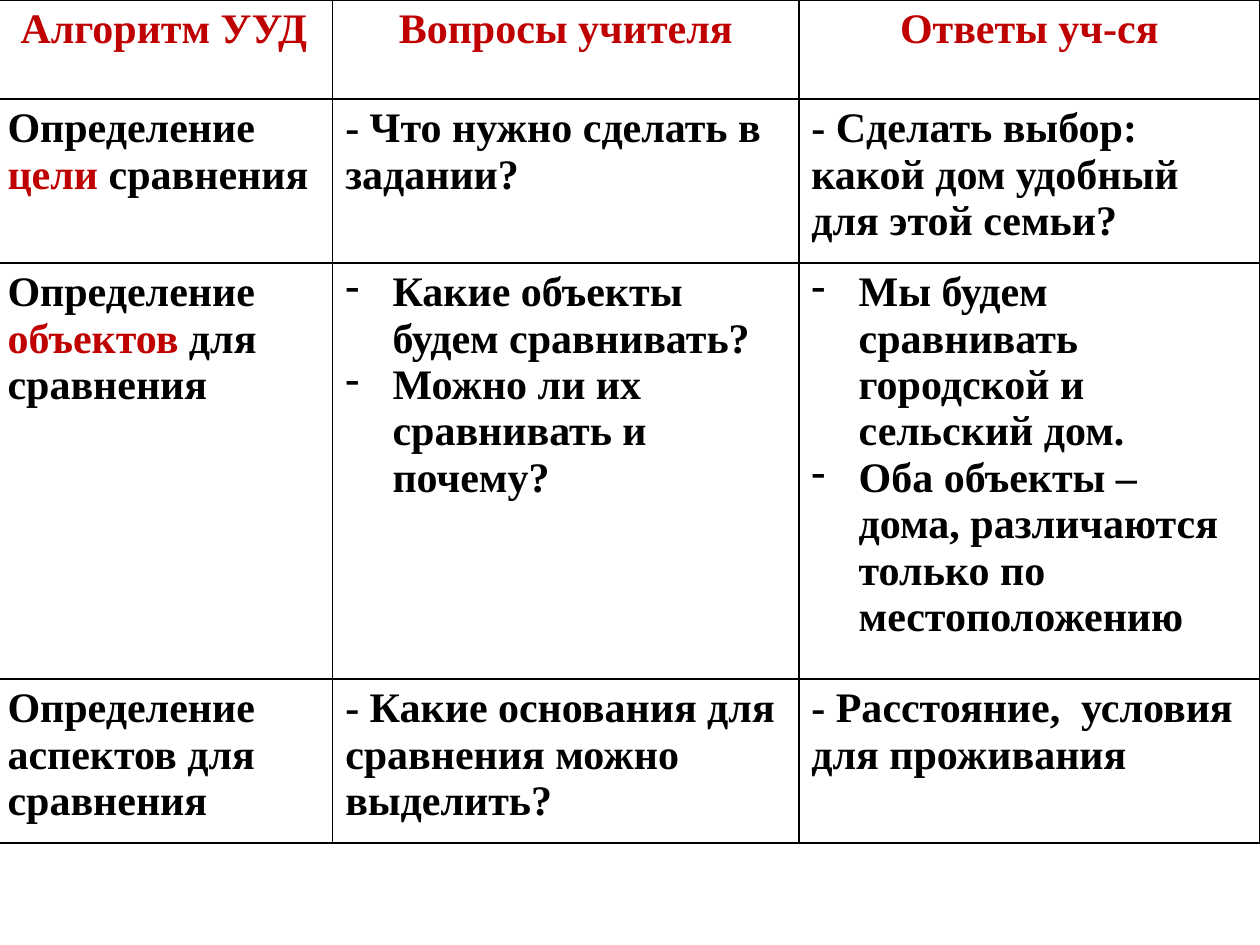
"""Builds a slide with a table of comparison steps, questions and answers."""
import dataclasses

import lxml.etree
import pptx
import pptx.dml.color
import pptx.enum.text
import pptx.oxml.ns
import pptx.util

Pt = pptx.util.Pt
RGB = pptx.dml.color.RGBColor
qn = pptx.oxml.ns.qn


@dataclasses.dataclass(frozen=True)
class Theme:
    """Colours, font and sizes of the slide."""
    ink: str = "000000"
    accent: str = "C00000"
    font: str = "Times New Roman"
    size: float = 24
    border: float = 1
    indent: float = 27


THEME = Theme()
COL_WIDTHS = (193, 266.4, 263.4)
ROW_HEIGHTS = (56.6, 93.7, 237.7, 93.7)
HEADER = ("Алгоритм УУД", "Вопросы учителя", "Ответы уч-ся")
STEPS = (
    (("Определение ", "цели ", "сравнения"),
     ("- Что нужно сделать в задании?",),
     ("- Сделать выбор: какой дом удобный для этой семьи?",)),
    (("Определение ", "объектов", " для сравнения"),
     ("Какие объекты будем сравнивать?",
      "Можно ли их сравнивать и почему?"),
     ("Мы будем сравнивать городской и сельский дом.",
      "Оба объекты – дома, различаются только по местоположению")),
    (("Определение аспектов для сравнения",),
     ("- Какие основания для сравнения можно выделить?",),
     ("- Расстояние,  условия для проживания",)),
)


def add_run(p, text, color=THEME.ink, size=THEME.size, bold=True):
    """Add a formatted run to a paragraph."""
    r = p.add_run()
    r.text = text
    r.font.name = THEME.font
    r.font.size = Pt(size)
    r.font.bold = bold
    r.font.color.rgb = RGB.from_string(color)


def set_dash(p):
    """Give a paragraph a hanging dash bullet."""
    pPr = p._p.get_or_add_pPr()
    pPr.set("marL", str(Pt(THEME.indent)))
    pPr.set("indent", str(-Pt(THEME.indent)))
    lxml.etree.SubElement(pPr, qn("a:buFontTx"))
    lxml.etree.SubElement(pPr, qn("a:buChar"), char="-")


def style_cell(cell):
    """Draw all four borders of a cell and remove its fill."""
    tcPr = cell._tc.get_or_add_tcPr()
    for side in ("a:lnL", "a:lnR", "a:lnT", "a:lnB"):
        ln = lxml.etree.SubElement(tcPr, qn(side), w=str(Pt(THEME.border)))
        fill = lxml.etree.SubElement(ln, qn("a:solidFill"))
        lxml.etree.SubElement(fill, qn("a:srgbClr"), val=THEME.ink)
    cell.fill.background()


def fill_header(cell, text):
    """Write a centred column heading."""
    p = cell.text_frame.paragraphs[0]
    p.alignment = pptx.enum.text.PP_ALIGN.CENTER
    add_run(p, text, color=THEME.accent)


def fill_step(cell, parts):
    """Write a step name, with its second part as the key word."""
    p = cell.text_frame.paragraphs[0]
    for i, text in enumerate(parts):
        add_run(p, text, color=THEME.accent if i == 1 else THEME.ink)


def fill_phrases(cell, phrases):
    """Write one phrase plainly, or several as a dashed list."""
    tf = cell.text_frame
    for i, text in enumerate(phrases):
        p = tf.add_paragraph() if i else tf.paragraphs[0]
        if len(phrases) > 1:
            set_dash(p)
        add_run(p, text)


def add_steps_table(s, left, top):
    """Place the table with its top left corner at the given point."""
    table = s.shapes.add_table(
        len(ROW_HEIGHTS), len(COL_WIDTHS), Pt(left), Pt(top),
        Pt(sum(COL_WIDTHS)), Pt(sum(ROW_HEIGHTS))).table
    table.first_row = table.horz_banding = False
    for column, width in zip(table.columns, COL_WIDTHS):
        column.width = Pt(width)
    for row, height in zip(table.rows, ROW_HEIGHTS):
        row.height = Pt(height)
    for cell in table.iter_cells():
        style_cell(cell)
    for c, text in enumerate(HEADER):
        fill_header(table.cell(0, c), text)
    for r, (step, *columns) in enumerate(STEPS, 1):
        fill_step(table.cell(r, 0), step)
        for c, phrases in enumerate(columns, 1):
            fill_phrases(table.cell(r, c), phrases)


def main():
    """Build and save the presentation."""
    prs = pptx.Presentation()
    prs.slide_width, prs.slide_height = Pt(720), Pt(540)
    s = prs.slides.add_slide(prs.slide_layouts[6])
    add_steps_table(s, left=-2.9, top=0)
    prs.save("out.pptx")


if __name__ == "__main__":
    main()
